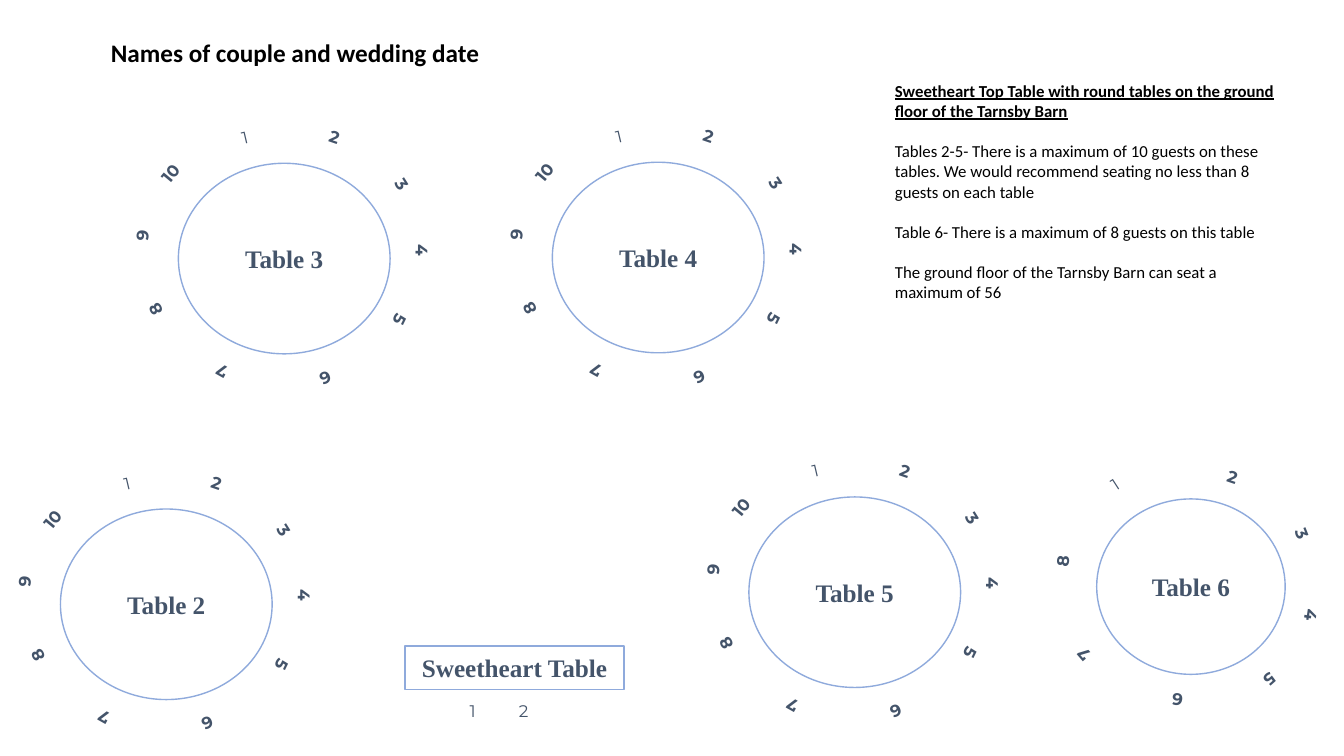
"""Build a wedding seating plan with round tables and a sweetheart table."""
from dataclasses import dataclass

import pptx
import pptx.dml.color
import pptx.enum.shapes
import pptx.enum.text
import pptx.util

HEADING = "Names of couple and wedding date"
GUIDANCE = [
    "Sweetheart Top Table with round tables on the ground floor of the Tarnsby Barn",
    "Tables 2-5- There is a maximum of 10 guests on these tables. "
    "We would recommend seating no less than 8 guests on each table",
    "Table 6- There is a maximum of 8 guests on this table",
    "The ground floor of the Tarnsby Barn can seat a maximum of 56",
]

COLUMNS, ROWS = 133.33, 75
HEADING_AREA = (10, 3.2, 58, 4)
GUIDANCE_AREA = (87.8, 7.5, 40.3, 25.2)
SEAT_SIZE = (7.6, 5.8)
TALL_SEATS = {4, 7, 8, 9, 10}

TEN_SEATS = [
    (-3.9, -12.05, 346.7), (5, -12.05, 18.8), (11.7, -7.35, 57.8),
    (13.7, -0.85, 90), (11.5, 6.05, 116), (4.1, 11.9, 157.7),
    (-6.2, 11.25, 209.2), (-12.8, 5.05, 242.8), (-14.1, -2.25, 275.4),
    (-11.3, -8.45, 309.8),
]
EIGHT_SEATS = [
    (-7.55, -10.2, 327.2), (4.15, -10.9, 18.8), (11.05, -5.2, 68.4),
    (11.95, 2.8, 98.6), (7.85, 9.2, 138.3), (-1.35, 11.25, 187),
    (-10.65, 6.8, 229.4), (-12.75, -2.5, 276.8),
]
COUPLE_SEATS = [(-4.15, 4.3, 0), (0.9, 4.3, 0)]

ROUND = pptx.enum.shapes.MSO_SHAPE.OVAL
STRAIGHT = pptx.enum.shapes.MSO_SHAPE.RECTANGLE
TABLES = [
    ("Sweetheart Table", STRAIGHT, (51.05, 66.25), (21.7, 4.3), COUPLE_SEATS),
    ("Table 4", ROUND, (65.3, 25.55), (21, 18.9), TEN_SEATS),
    ("Table 3", ROUND, (28.2, 25.65), (21, 18.9), TEN_SEATS),
    ("Table 2", ROUND, (16.5, 59.95), (21, 18.9), TEN_SEATS),
    ("Table 5", ROUND, (84.8, 58.75), (21, 18.9), TEN_SEATS),
    ("Table 6", ROUND, (118.15, 58.2), (18.7, 17.4), EIGHT_SEATS),
]


@dataclass(frozen=True)
class Theme:
    ink: str = "000000"
    slate: str = "44546A"
    rim: str = "8FAADC"
    text_face: str = "Calibri"
    table_face: str = "Times New Roman"
    seat_face: str = "Montserrat"
    large: int = 18
    small: int = 12
    rim_width: int = 1
    paragraph_gap: float = 14.4


THEME = Theme()


def cells(count):
    return pptx.util.Inches(count / 10)


def rgb(code):
    return pptx.dml.color.RGBColor.from_string(code)


def format_runs(paragraph, face, size, color, bold=False, underline=False):
    for run in paragraph.runs:
        run.font.name = face
        run.font.size = pptx.util.Pt(size)
        run.font.color.rgb = rgb(color)
        run.font.bold = bold
        run.font.underline = underline


def add_label(group, outline, center, size, label, face, type_size, bold):
    width, height = size
    left, top = center[0] - width / 2, center[1] - height / 2
    part = group.shapes.add_shape(outline, *map(cells, (left, top, width, height)))
    part.shadow.inherit = False
    part.fill.background()
    part.line.fill.background()
    frame = part.text_frame
    frame.margin_left = frame.margin_right = frame.margin_top = frame.margin_bottom = 0
    frame.vertical_anchor = pptx.enum.text.MSO_ANCHOR.MIDDLE
    frame.word_wrap = True
    frame.text = label
    frame.paragraphs[0].alignment = pptx.enum.text.PP_ALIGN.CENTER
    format_runs(frame.paragraphs[0], face, type_size, THEME.slate, bold)
    return part


def add_seating(slide, name, outline, center, size, seats):
    group = slide.shapes.add_group_shape()
    table = add_label(group, outline, center, size, name, THEME.table_face, THEME.large, True)
    table.line.color.rgb = rgb(THEME.rim)
    table.line.width = pptx.util.Pt(THEME.rim_width)
    for number, (across, down, turn) in enumerate(seats, 1):
        seat_size = SEAT_SIZE[::-1] if number in TALL_SEATS else SEAT_SIZE
        seat_center = (center[0] + across, center[1] + down)
        bold = number > 1 and outline == ROUND
        seat = add_label(group, outline, seat_center, seat_size, str(number),
                         THEME.seat_face, THEME.small, bold)
        seat.rotation = turn


def add_heading(slide):
    heading = slide.shapes.title
    heading.left, heading.top, heading.width, heading.height = map(cells, HEADING_AREA)
    frame = heading.text_frame
    frame.text = HEADING
    frame.word_wrap = True
    frame.auto_size = pptx.enum.text.MSO_AUTO_SIZE.NONE
    frame.vertical_anchor = pptx.enum.text.MSO_ANCHOR.TOP
    frame.paragraphs[0].alignment = pptx.enum.text.PP_ALIGN.LEFT
    format_runs(frame.paragraphs[0], THEME.text_face, THEME.large, THEME.ink, bold=True)


def add_guidance(slide):
    frame = slide.shapes.add_textbox(*map(cells, GUIDANCE_AREA)).text_frame
    frame.word_wrap = True
    frame.text = "\n".join(GUIDANCE)
    for index, paragraph in enumerate(frame.paragraphs):
        lead = index == 0
        paragraph.space_before = pptx.util.Pt(0 if lead else THEME.paragraph_gap)
        format_runs(paragraph, THEME.text_face, THEME.small, THEME.ink, lead, lead)


def main():
    deck = pptx.Presentation()
    deck.slide_width, deck.slide_height = cells(COLUMNS), cells(ROWS)
    slide = deck.slides.add_slide(deck.slide_layouts.get_by_name("Title Only"))
    add_heading(slide)
    add_guidance(slide)
    for table in TABLES:
        add_seating(slide, *table)
    deck.save("out.pptx")


if __name__ == "__main__":
    main()
